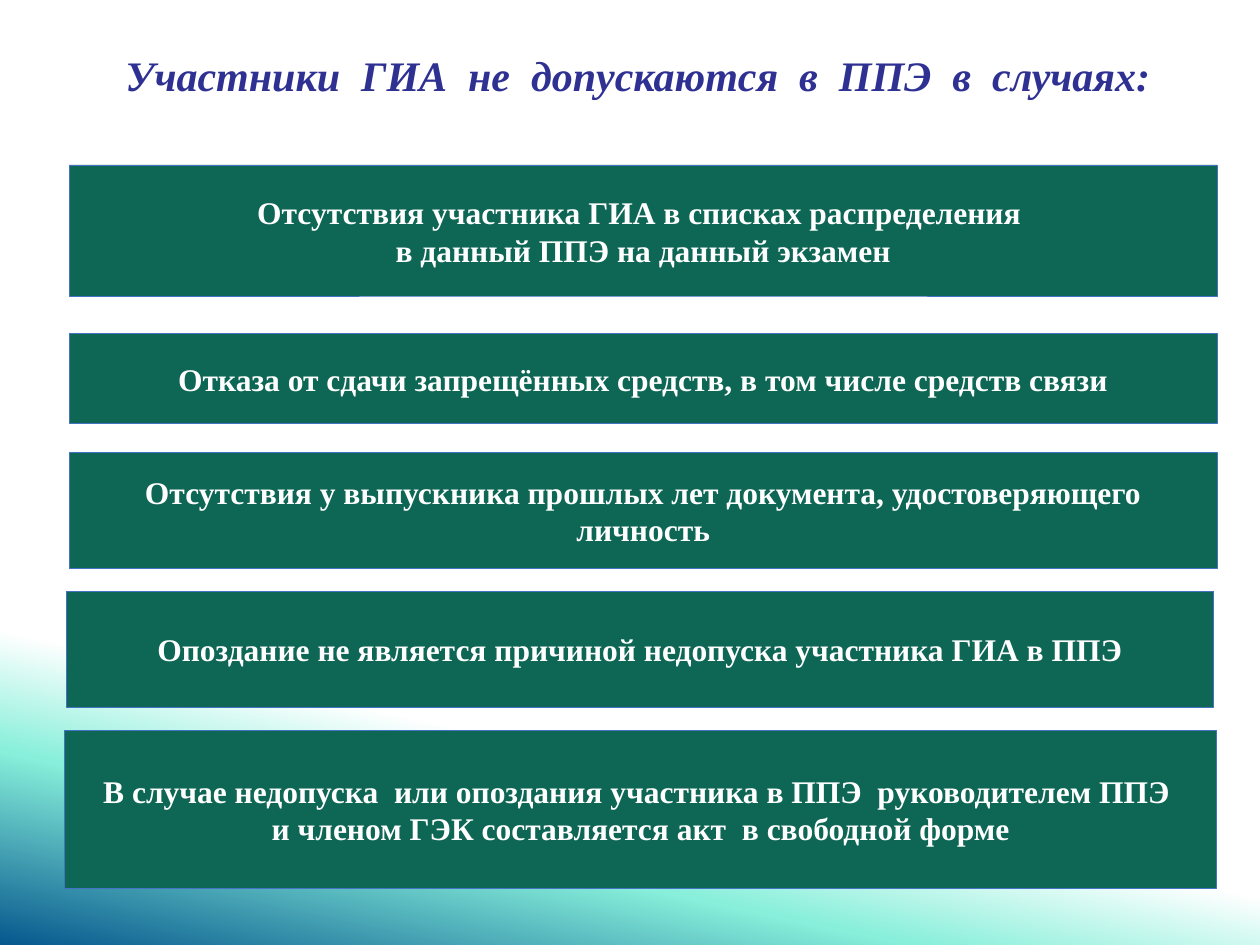
from copy import deepcopy
from pptx import Presentation
from pptx.dml.color import RGBColor as Rgb
from pptx.enum.shapes import MSO_SHAPE as Kind
from pptx.enum.text import MSO_ANCHOR as Anchor, PP_ALIGN as Align
from pptx.util import Pt

TITLE = "Участники  ГИА  не  допускаются  в  ППЭ  в  случаях:"
CASES = [
    ("Отсутствия участника ГИА в списках распределения \vв данный ППЭ на данный экзамен",
     (39.6, 94.3, 655.9, 74.9)),
    ("Отказа от сдачи запрещённых средств, в том числе средств связи",
     (39.6, 190.8, 655.9, 51.1)),
    ("Отсутствия у выпускника прошлых лет документа, удостоверяющего личность",
     (39.6, 258.5, 655.9, 66.5)),
    ("Опоздание не является причиной недопуска участника ГИА в ППЭ",
     (37.8, 337.8, 655.9, 66.5)),
    ("В случае недопуска  или опоздания участника в ППЭ  руководителем ППЭ \vи членом ГЭК составляется акт  в свободной форме",
     (36.9, 417.4, 658.4, 90.2)),
]
THEME = {
    "font": "Times New Roman",
    "title": "2E3192", "title size": 24,
    "text": "FFFFFF", "text size": 18,
    "fill": "0E6655", "line": "4472C4",
    "back": [(0.74, "FFFFFF"), (0.84, "87EFDA"), (1, "06588E")],
    "angle": 102,
}


def paint(slide):
    fill = slide.background.fill
    fill.gradient()
    fill.gradient_angle = 360 - THEME["angle"]
    stops = slide.element.xpath(".//a:gsLst")[0]
    stops.append(deepcopy(stops[0]))
    for stop, (place, color) in zip(fill.gradient_stops, THEME["back"]):
        stop.position = place
        stop.color.rgb = Rgb.from_string(color)


def write(shape, text, role, italic=False):
    frame = shape.text_frame
    frame.word_wrap = True
    frame.vertical_anchor = Anchor.MIDDLE
    frame.text = text
    for para in frame.paragraphs:
        para.alignment = Align.CENTER
        for run in para.runs:
            font = run.font
            font.name = THEME["font"]
            font.size = Pt(THEME[role + " size"])
            font.bold = True
            font.italic = italic
            font.color.rgb = Rgb.from_string(THEME[role])


def main():
    deck = Presentation()
    deck.slide_width, deck.slide_height = Pt(720), Pt(540)
    slide = deck.slides.add_slide(deck.slide_layouts[6])
    paint(slide)
    head = slide.shapes.add_textbox(Pt(48.2), Pt(9.4), Pt(632.9), Pt(66.2))
    write(head, TITLE, "title", italic=True)
    for text, place in CASES:
        box = slide.shapes.add_shape(Kind.RECTANGLE, *map(Pt, place))
        box.shadow.inherit = False
        box.fill.solid()
        box.fill.fore_color.rgb = Rgb.from_string(THEME["fill"])
        box.line.color.rgb = Rgb.from_string(THEME["line"])
        box.line.width = Pt(0.5)
        write(box, text, "text")
    deck.save("out.pptx")


if __name__ == "__main__":
    main()
